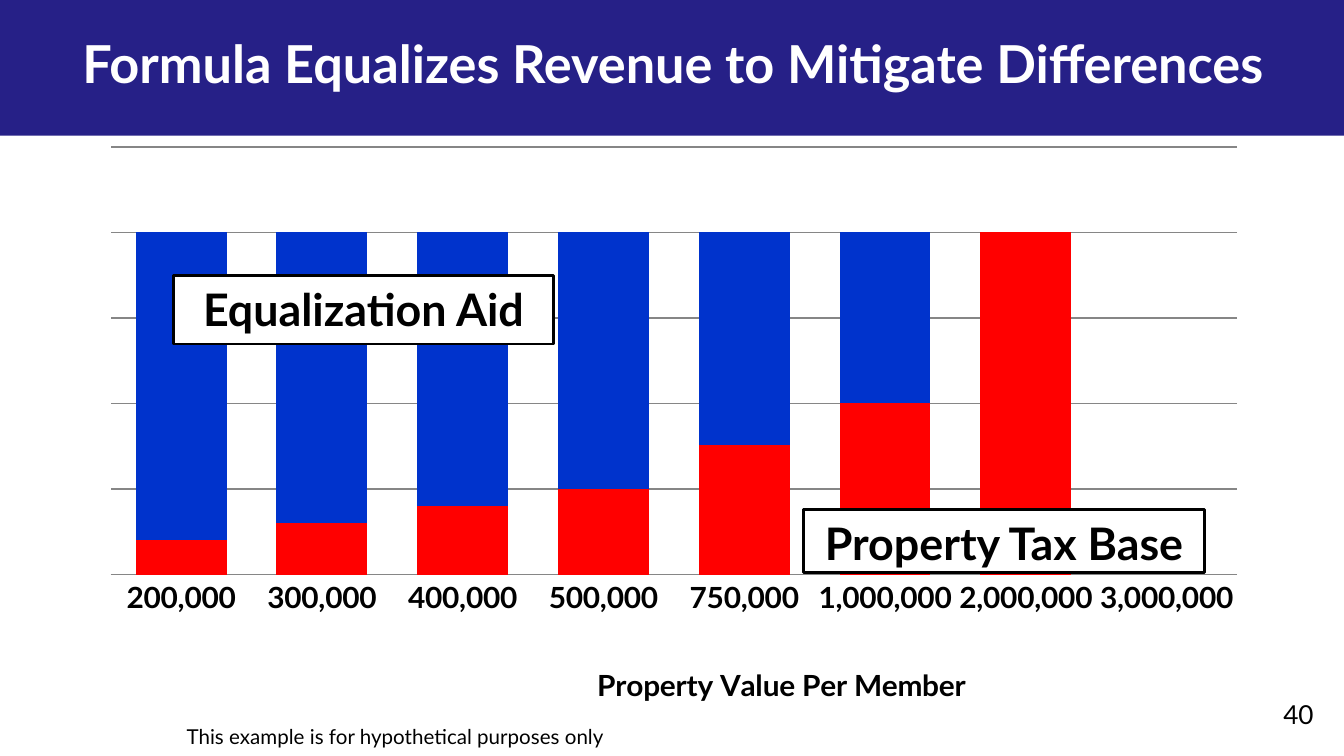
from lxml import etree
from pptx import Presentation
from pptx.chart.data import CategoryChartData
from pptx.dml.color import RGBColor
from pptx.enum import chart as ch, shapes, text
from pptx.oxml.ns import qn
from pptx.util import Inches, Pt

NAVY = RGBColor(0x26, 0x20, 0x87)
RED = RGBColor(0xFF, 0, 0)
BLUE = RGBColor(0, 0x33, 0xCC)
GREY = RGBColor(0x86, 0x86, 0x86)
BLACK = RGBColor(0, 0, 0)
WHITE = RGBColor(255, 255, 255)

LEFT, MID = text.PP_ALIGN.LEFT, text.PP_ALIGN.CENTER


def write(shape, words, size, color=BLACK, bold=False, align=LEFT):
    frame = shape.text_frame
    frame.word_wrap = True
    para = frame.paragraphs[0]
    para.alignment = align
    run = para.add_run()
    run.text = words
    font = run.font
    font.name, font.size, font.bold = "Lato", Pt(size), bold
    font.color.rgb = color


def place(parent, index, **spots):
    """Give a chart part a manual layout, in fractions of the chart."""
    for old in parent.findall(qn("c:layout")):
        parent.remove(old)
    layout = etree.Element(qn("c:layout"))
    parent.insert(index, layout)
    manual = etree.SubElement(layout, qn("c:manualLayout"))
    for tag, val in spots.items():
        etree.SubElement(manual, qn("c:" + tag)).set("val", str(val))


deck = Presentation()
deck.slide_width, deck.slide_height = Inches(10), Inches(10 * 9 / 16)
slide = deck.slides.add_slide(deck.slide_layouts[6])
items = slide.shapes

# Title band
band = items.add_shape(shapes.MSO_SHAPE.RECTANGLE, Inches(-0.01), 0,
                       Inches(10.01), Inches(1.01))
band.shadow.inherit = False
band.fill.solid()
band.fill.fore_color.rgb = NAVY
band.line.fill.background()

title = items.add_textbox(Inches(0.17), Inches(0.18), Inches(9.67), Inches(0.57))
write(title, "Formula Equalizes Revenue to Mitigate Differences", 28, WHITE, True, MID)

note = items.add_textbox(Inches(1.29), Inches(5.34), Inches(4.31), Inches(0.29))
write(note, "This example is for hypothetical purposes only", 11)

# Stacked columns; the last category has no column
base = [10, 15, 20, 25, 38, 50, 100]
data = CategoryChartData(number_format="#,##0")
data.categories = [200000, 300000, 400000, 500000, 750000, 1000000, 2000000, 3000000]
data.categories.number_format = "#,##0"
data.add_series("Series 1", base)
data.add_series("Series 2", [100 - part for part in base])
chart = items.add_chart(ch.XL_CHART_TYPE.COLUMN_STACKED, Inches(0.65), Inches(1.01),
                        Inches(8.73), Inches(4.28), data).chart
chart.has_legend = False
chart.has_title = False
chart.font.name, chart.font.size = "Calibri", Pt(10)
chart.font.color.rgb = BLACK

plot = chart.plots[0]
plot.gap_width, plot.overlap = 55, 100
plot.vary_by_categories = False
for series, color in zip(plot.series, (RED, BLUE)):
    series.format.fill.solid()
    series.format.fill.fore_color.rgb = color

scale = chart.value_axis
scale.minimum_scale, scale.maximum_scale, scale.major_unit = 0, 125, 25
scale.visible = False
scale.has_major_gridlines = True
scale.tick_labels.number_format = "#,##0"

axis = chart.category_axis
axis.major_tick_mark = ch.XL_TICK_MARK.NONE
axis.tick_labels.number_format = "#,##0"
labels = axis.tick_labels.font
labels.name, labels.size, labels.bold = "Lato", Pt(16), True
labels.color.rgb = BLACK
for line in (scale.major_gridlines.format.line, axis.format.line):
    line.color.rgb = GREY
    line.width = Pt(0.75)
write(axis.axis_title, "Property Value Per Member", 16, bold=True, align=MID)

area = chart.element.find(".//" + qn("c:plotArea"))
place(area, 0, layoutTarget="inner", xMode="edge", yMode="edge",
      x=0.02, y=0.02, w=0.96, h=0.76)
name = area.find(".//" + qn("c:title"))
place(name, 1, xMode="edge", yMode="edge", x=0.43, y=0.93)

# Labels over the columns
for words, left, top, width, height in (
        ("Equalization Aid", 1.29, 2.05, 2.83, 0.51),
        ("Property Tax Base", 5.98, 3.79, 2.98, 0.47)):
    label = items.add_shape(shapes.MSO_SHAPE.RECTANGLE, Inches(left), Inches(top),
                            Inches(width), Inches(height))
    label.shadow.inherit = False
    label.fill.solid()
    label.fill.fore_color.rgb = WHITE
    label.line.color.rgb = BLACK
    label.line.width = Pt(1.5)
    label.text_frame.vertical_anchor = text.MSO_ANCHOR.TOP
    write(label, words, 24, bold=True, align=MID)

number = items.add_textbox(Inches(9.45), Inches(5.15), Inches(0.55), Inches(0.38))
write(number, "40", 14)

deck.save("out.pptx")
